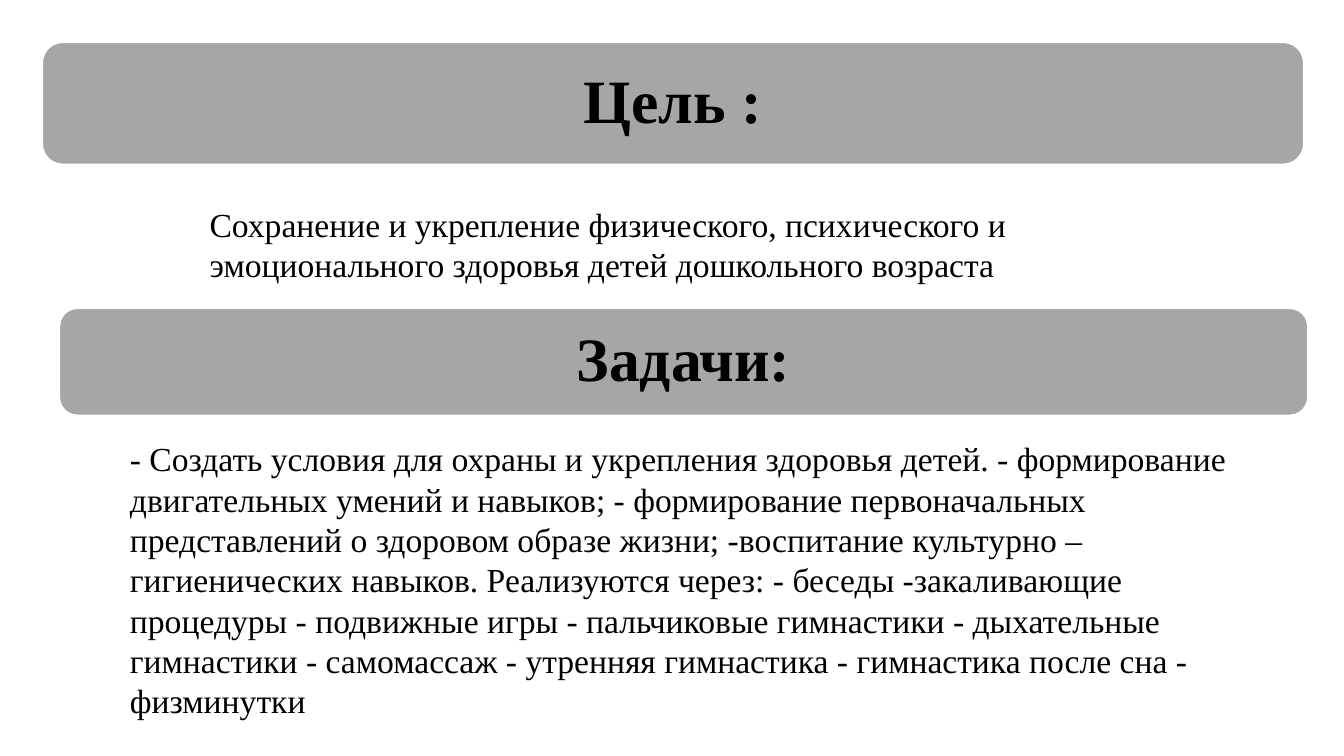
from dataclasses import dataclass

from pptx import Presentation
from pptx.dml.color import RGBColor
from pptx.enum.shapes import MSO_SHAPE
from pptx.enum.text import MSO_ANCHOR, MSO_AUTO_SIZE, PP_ALIGN
from pptx.util import Inches, Pt

ROUNDED = MSO_SHAPE.ROUNDED_RECTANGLE
MIDDLE, TOP = MSO_ANCHOR.MIDDLE, MSO_ANCHOR.TOP
CENTER, LEFT = PP_ALIGN.CENTER, PP_ALIGN.LEFT
NO_AUTOFIT = MSO_AUTO_SIZE.NONE
FONT = "Times New Roman"
COLORS = {"banner": "A6A6A6", "outline": "FFFFFF", "text": "000000"}


@dataclass(frozen=True)
class Block:
    text: str
    left: float
    top: float
    width: float
    height: float

    def box(self):
        return [Inches(value) for value in (self.left, self.top, self.width, self.height)]


GOAL_HEADING = Block("Цель :", 0.42, 0.42, 12.51, 1.21)
TASKS_HEADING = Block("Задачи:", 0.59, 3.06, 12.38, 1.06)
BODIES = (
    Block(
        "Сохранение и укрепление физического, психического и эмоционального "
        "здоровья детей дошкольного возраста",
        1.98, 1.97, 9.45, 0.91,
    ),
    Block(
        "- Создать условия для охраны и укрепления здоровья детей. "
        "- формирование двигательных умений и навыков; "
        "- формирование первоначальных представлений о здоровом образе жизни; "
        "-воспитание культурно – гигиенических навыков. Реализуются через: "
        "- беседы -закаливающие процедуры - подвижные игры "
        "- пальчиковые гимнастики - дыхательные гимнастики - самомассаж "
        "- утренняя гимнастика - гимнастика после сна - физминутки",
        1.19, 4.3, 11.11, 2.93,
    ),
)


def color(name: str) -> RGBColor:
    """Return the named palette colour."""
    return RGBColor.from_string(COLORS[name])


def write_text(shape, text: str, heading: bool) -> None:
    """Fill a shape with heading or body text."""
    frame = shape.text_frame
    frame.word_wrap = True
    frame.auto_size = NO_AUTOFIT
    frame.vertical_anchor = MIDDLE if heading else TOP
    paragraph = frame.paragraphs[0]
    paragraph.alignment = CENTER if heading else LEFT
    if heading:
        paragraph.line_spacing = 0.9
        frame.margin_left = frame.margin_right = Inches(0.18)
        frame.margin_top = frame.margin_bottom = Inches(0.18)
    run = paragraph.add_run()
    run.text = text
    run.font.name = FONT
    run.font.size = Pt(44 if heading else 24)
    run.font.bold = heading
    run.font.color.rgb = color("text")


def add_banner(slide, block: Block):
    """Draw the rounded grey bar behind a heading."""
    banner = slide.shapes.add_shape(ROUNDED, *block.box())
    banner.shadow.inherit = False
    banner.fill.solid()
    banner.fill.fore_color.rgb = color("banner")
    banner.line.color.rgb = color("outline")
    banner.line.width = Pt(1)
    return banner


def place_title(slide, block: Block) -> None:
    """Move the title placeholder in front of its banner and fill it."""
    title = slide.shapes.title
    title.left, title.top, title.width, title.height = block.box()
    title.element.getparent().append(title.element)
    write_text(title, block.text, heading=True)


def main() -> None:
    """Build and save the slide."""
    presentation = Presentation()
    presentation.slide_width = Inches(13.33)
    presentation.slide_height = Inches(7.5)
    slide = presentation.slides.add_slide(presentation.slide_layouts.get_by_name("Title Only"))

    add_banner(slide, GOAL_HEADING)
    place_title(slide, GOAL_HEADING)
    write_text(add_banner(slide, TASKS_HEADING), TASKS_HEADING.text, heading=True)
    for body in BODIES:
        write_text(slide.shapes.add_textbox(*body.box()), body.text, heading=False)

    presentation.save("out.pptx")


if __name__ == "__main__":
    main()
